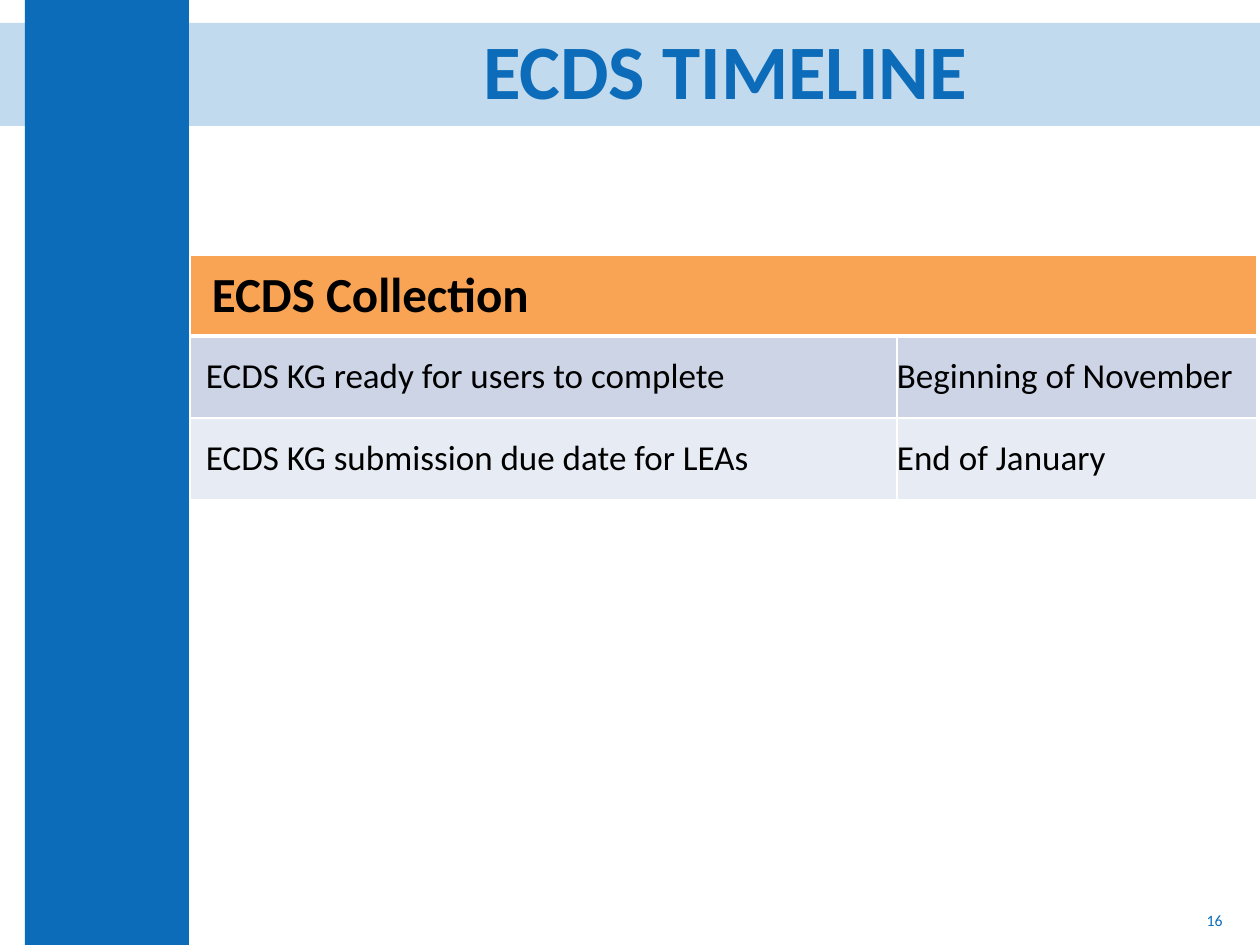
from lxml import etree
from pptx import Presentation
from pptx import util as u
from pptx.dml.color import RGBColor
from pptx.enum import shapes, text
from pptx.oxml.ns import qn

PX = 914400 / 126
BLUE = RGBColor(0x0D, 0x6C, 0xB9)
ORANGE = RGBColor(0xF9, 0xA3, 0x54)
DARK_ROW = RGBColor(0xCC, 0xD4, 0xE6)
LIGHT_ROW = RGBColor(0xE7, 0xEB, 0xF3)
BLACK = RGBColor(0, 0, 0)
FONT = "Calibri"


def px(*lengths):
    return [round(length * PX) for length in lengths]


def style_text(frame, size, color, bold=False, align=text.PP_ALIGN.LEFT):
    paragraph = frame.paragraphs[0]
    paragraph.alignment = align
    font = paragraph.runs[0].font
    font.name, font.size, font.bold = FONT, u.Pt(size), bold
    font.color.rgb = color


presentation = Presentation()
presentation.slide_width, presentation.slide_height = px(1260, 945)
slide = presentation.slides.add_slide(presentation.slide_layouts[6])

# Title band and side bar
for box, alpha in [((0, 23, 1260, 103), 25), ((25, 0, 164, 945), 100)]:
    shape = slide.shapes.add_shape(shapes.MSO_SHAPE.RECTANGLE, *px(*box))
    shape.shadow.inherit = False
    shape.fill.solid()
    shape.fill.fore_color.rgb = BLUE
    shape.line.fill.background()
    if alpha < 100:
        color = shape.fill._xPr.find(".//" + qn("a:srgbClr"))
        etree.SubElement(color, qn("a:alpha"), val=str(alpha * 1000))

# Title and slide number
labels = [
    ("16", (951, 895, 284, 50), 9, False, text.PP_ALIGN.RIGHT),
    ("ECDS TIMELINE", (228, 23, 995, 103), 44, True, text.PP_ALIGN.CENTER),
]
for words, box, size, bold, align in labels:
    frame = slide.shapes.add_textbox(*px(*box)).text_frame
    frame.word_wrap = True
    frame.vertical_anchor = text.MSO_ANCHOR.MIDDLE
    frame.text = words
    style_text(frame, size, BLUE, bold, align)
frame.paragraphs[0].line_spacing = 0.9

# Timeline table
rows = [
    (("ECDS Collection", ""), 81, 28, True, ORANGE, 22),
    (("ECDS KG ready for users to complete", "Beginning of November"),
     82, 20, False, DARK_ROW, 16),
    (("ECDS KG submission due date for LEAs", "End of January"),
     82, 20, False, LIGHT_ROW, 16),
]
table = slide.shapes.add_table(3, 2, *px(190, 255, 1067, 245)).table
for column, width in zip(table.columns, px(707, 360)):
    column.width = width
table.cell(0, 0).merge(table.cell(0, 1))

for row_index, (words, height, size, bold, color, indent) in enumerate(rows):
    table.rows[row_index].height = px(height)[0]
    for column_index, entry in enumerate(words):
        cell = table.cell(row_index, column_index)
        cell.margin_right = cell.margin_top = cell.margin_bottom = 0
        cell.margin_left = px(0 if column_index else indent)[0]
        cell.vertical_anchor = text.MSO_ANCHOR.MIDDLE

        # White borders, thick between the heading and the body
        properties = cell._tc.get_or_add_tcPr()
        for side in "LRTB":
            thick = (row_index, side) in [(0, "B"), (1, "T")]
            line = etree.SubElement(properties, qn("a:ln" + side),
                                    w=str(u.Pt(3 if thick else 1)))
            fill = etree.SubElement(line, qn("a:solidFill"))
            etree.SubElement(fill, qn("a:srgbClr"), val="FFFFFF")

        cell.fill.solid()
        cell.fill.fore_color.rgb = color
        if entry:
            cell.text_frame.text = entry
            style_text(cell.text_frame, size, BLACK, bold)

presentation.save("out.pptx")
